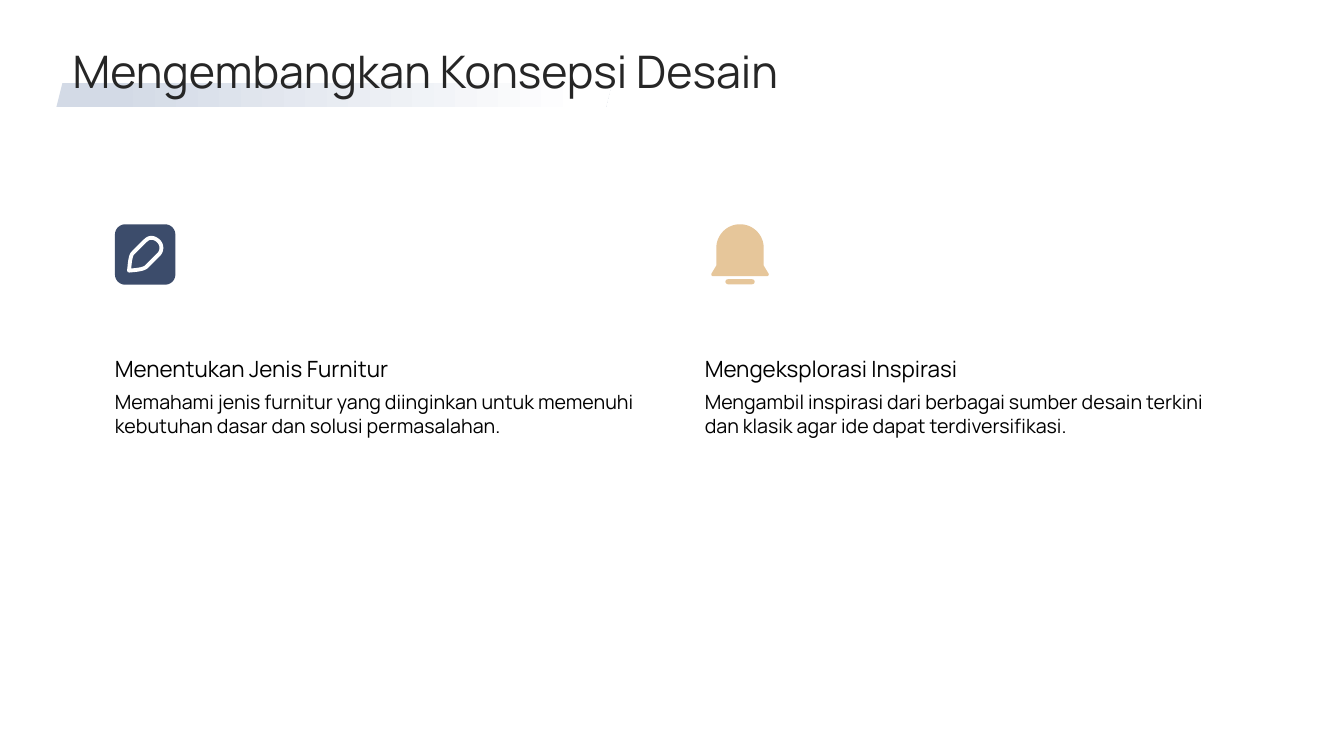
from dataclasses import dataclass
from math import cos, pi, sin

from pptx import Presentation
from pptx.dml.color import RGBColor
from pptx.enum.shapes import MSO_SHAPE
from pptx.enum.text import MSO_ANCHOR
from pptx.util import Inches, Pt

ROUNDED = MSO_SHAPE.ROUNDED_RECTANGLE
PARALLELOGRAM = MSO_SHAPE.PARALLELOGRAM
TOP, MIDDLE, BOTTOM = MSO_ANCHOR.TOP, MSO_ANCHOR.MIDDLE, MSO_ANCHOR.BOTTOM

# Content
TITLE = "Mengembangkan Konsepsi Desain"
TOPICS = [
    ("Menentukan Jenis Furnitur",
     "Memahami jenis furnitur yang diinginkan untuk memenuhi "
     "kebutuhan dasar dan solusi permasalahan."),
    ("Mengeksplorasi Inspirasi",
     "Mengambil inspirasi dari berbagai sumber desain terkini "
     "dan klasik agar ide dapat terdiversifikasi."),
]


@dataclass(frozen=True)
class Theme:
    font: str = "Manrope"
    title_size: int = 32
    heading_size: int = 16
    body_size: int = 14
    title: str = "262626"
    text: str = "000000"
    navy: str = "3C4C6B"
    sand: str = "E6C69A"
    band: str = "D3DAE6"
    white: str = "FFFFFF"


THEME = Theme()

# Grid, in inches
COLUMN_LEFT, COLUMN_PITCH, COLUMN_WIDTH = 1.14, 5.85, 5.19
ICON_TOP, ICON_SIZE = 2.225, 0.6
HEADING_ROW = (2.97, 0.82)
BODY_ROW = (3.87, 1.85)
TITLE_BOX = (0.72, 0.47, 11.88, 0.47)
BAND_BOX = (0.56, 0.82, 5.51, 0.24)

# Pencil outline inside its icon: start, then straight (1 point) or curved (3 points) steps
PENCIL = [
    [(0.36, 0.135)],
    [(0.385, 0.135), (0.41, 0.145), (0.435, 0.17)],
    [(0.47, 0.205), (0.47, 0.265), (0.435, 0.3)],
    [(0.315, 0.42)],
    [(0.285, 0.45), (0.2, 0.455), (0.14, 0.46)],
    [(0.145, 0.425), (0.15, 0.305), (0.18, 0.285)],
    [(0.295, 0.17)],
    [(0.315, 0.15), (0.335, 0.135), (0.36, 0.135)],
]
# Right side of the bell below its dome, measured from the bell's top centre
DOME_RADIUS = 0.235
BELL_SKIRT = [
    [(DOME_RADIUS, 0.41)],
    [(0.28, 0.485)],
    [(0.29, 0.495), (0.285, 0.515), (0.265, 0.515)],
]

presentation = Presentation()
presentation.slide_width, presentation.slide_height = Inches(13.33), Inches(7.5)
slide = presentation.slides.add_slide(presentation.slide_layouts[6])


def color(value):
    return RGBColor.from_string(value)


def add_text(box, text, size, text_color, anchor):
    frame = slide.shapes.add_textbox(*map(Inches, box)).text_frame
    frame.word_wrap = True
    frame.vertical_anchor = anchor
    frame.margin_left = frame.margin_right = frame.margin_top = frame.margin_bottom = 0
    run = frame.paragraphs[0].add_run()
    run.text = text
    run.font.name, run.font.size = THEME.font, Pt(size)
    run.font.color.rgb = color(text_color)


def paint(shape, fill):
    shape.shadow.inherit = False
    shape.line.fill.background()
    shape.fill.solid()
    shape.fill.fore_color.rgb = color(fill)


def add_rounded(box, fill, corner):
    shape = slide.shapes.add_shape(ROUNDED, *map(Inches, box))
    shape.adjustments[0] = corner
    paint(shape, fill)


def trace(steps, samples=10):
    """Turn straight and cubic steps into a list of points."""
    points = []
    for step in steps:
        if len(step) == 1:
            points += step
            continue
        controls = [points[-1], *step]
        for index in range(1, samples + 1):
            t = index / samples
            weights = ((1 - t) ** 3, 3 * t * (1 - t) ** 2, 3 * t * t * (1 - t), t ** 3)
            points.append(tuple(sum(w * point[axis] for w, point in zip(weights, controls))
                                for axis in (0, 1)))
    return points


def add_outline(points, left, top):
    placed = [(Inches(left + x), Inches(top + y)) for x, y in points]
    builder = slide.shapes.build_freeform(*placed[0], scale=1.0)
    builder.add_line_segments(placed[1:], close=True)
    return builder.convert_to_shape()


def add_pencil_icon(left, top):
    add_rounded((left, top, ICON_SIZE, ICON_SIZE), THEME.navy, 0.17)
    pencil = add_outline(trace(PENCIL), left, top)
    pencil.shadow.inherit = False
    pencil.fill.background()
    pencil.line.color.rgb = color(THEME.white)
    pencil.line.width = Pt(2.75)


def add_bell_icon(left, top):
    center = left + 0.35
    angles = [pi / 2 * index / 16 for index in range(17)]
    dome = [(DOME_RADIUS * sin(a), DOME_RADIUS * (1 - cos(a))) for a in angles]
    right = dome + trace(BELL_SKIRT)
    mirrored = [(-x, y) for x, y in reversed(right[1:])]
    paint(add_outline(right + mirrored, center, top), THEME.sand)
    add_rounded((center - 0.145, top + 0.545, 0.29, 0.05), THEME.sand, 0.5)


# Topic columns
for column, (heading, body) in enumerate(TOPICS):
    left = COLUMN_LEFT + column * COLUMN_PITCH
    add_icon = (add_pencil_icon, add_bell_icon)[column]
    add_icon(left, ICON_TOP)
    for text, (top, height), size, anchor in (
        (heading, HEADING_ROW, THEME.heading_size, BOTTOM),
        (body, BODY_ROW, THEME.body_size, TOP),
    ):
        add_text((left, top, COLUMN_WIDTH, height), text, size, THEME.text, anchor)

# Title over its fading band
band = slide.shapes.add_shape(PARALLELOGRAM, *map(Inches, BAND_BOX))
band.shadow.inherit = False
band.line.fill.background()
band.fill.gradient()
band.fill.gradient_angle = 0
stops = ((0.1, THEME.band), (0.95, THEME.white))
for stop, (position, stop_color) in zip(band.fill.gradient_stops, stops):
    stop.position = position
    stop.color.rgb = color(stop_color)
add_text(TITLE_BOX, TITLE, THEME.title_size, THEME.title, MIDDLE)

presentation.save("out.pptx")
